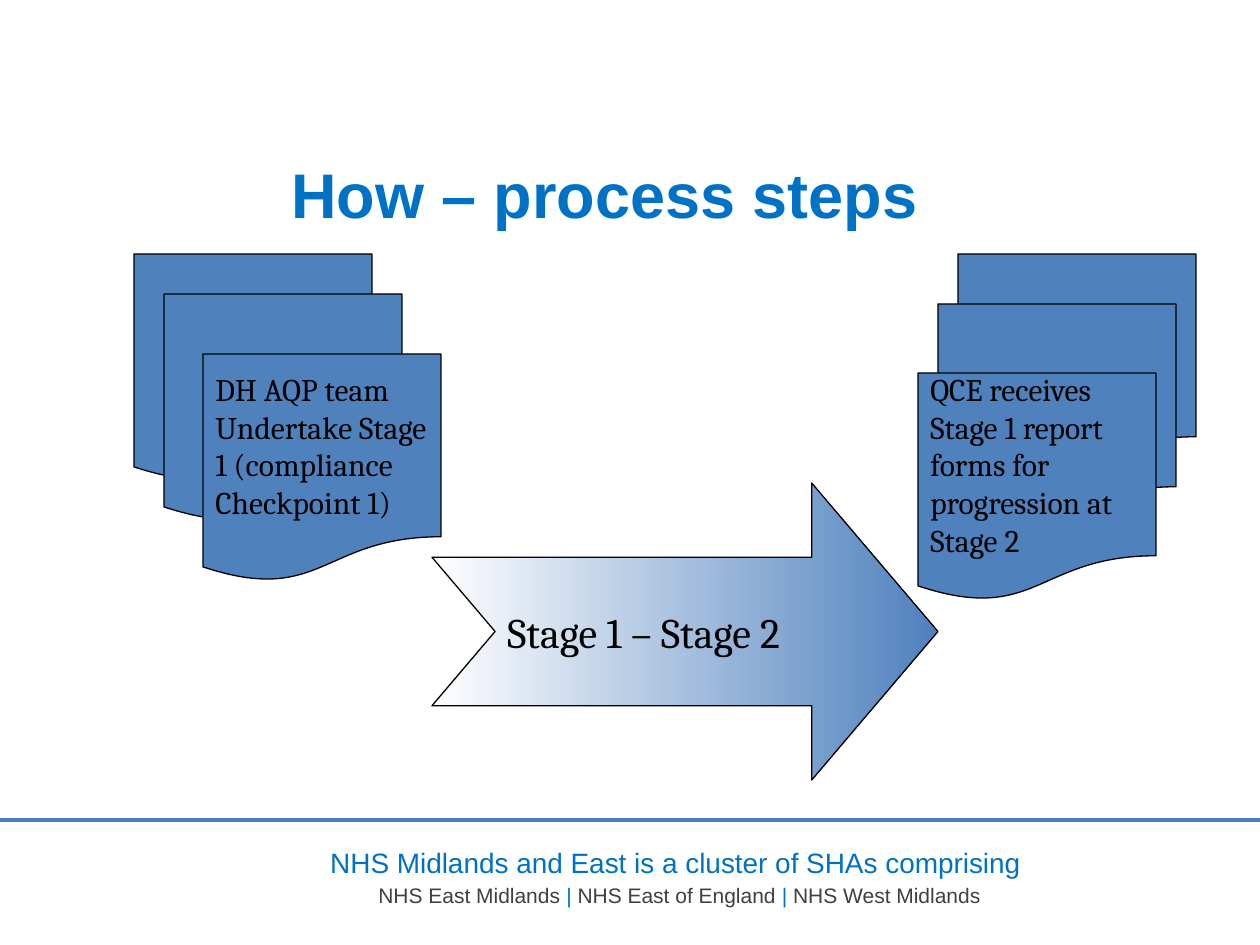
from lxml import etree
from pptx import Presentation
from pptx import util as u
from pptx.dml.color import RGBColor
from pptx.enum import shapes, text
from pptx.oxml.ns import qn

BLUE = RGBColor(0x00, 0x72, 0xC6)
FILL = RGBColor(0x4F, 0x81, 0xBD)
RULE = RGBColor(0x4B, 0x7E, 0xBC)
GREY = RGBColor(0x40, 0x40, 0x40)
BLACK = RGBColor(0, 0, 0)
WHITE = RGBColor(0xFF, 0xFF, 0xFF)

PX_PER_INCH = 126
SLIDE_W, SLIDE_H = 1260, 945


def px(*lengths):
    return [round(n * 914400 / PX_PER_INCH) for n in lengths]


class SlideBuilder:
    heading = {"name": "Arial", "bold": True}
    plain = {"name": "Arial"}
    label = {"name": "Cambria"}

    def __init__(self, deck):
        self.slide = deck.slides.add_slide(deck.slide_layouts[5])

    def style(self, font, size, color, values):
        for name, value in values.items():
            setattr(font, name, value)
        font.size = u.Pt(size)
        font.color.rgb = color

    def title(self, wording, at, size):
        box = self.slide.shapes.title
        box.left, box.top, box.width, box.height = px(*at)
        frame = box.text_frame
        frame.text = wording
        frame.vertical_anchor = text.MSO_ANCHOR.MIDDLE
        para = frame.paragraphs[0]
        para.alignment = text.PP_ALIGN.CENTER
        self.style(para.runs[0].font, size, BLUE, self.heading)

    def rule(self, y, weight):
        line = self.slide.shapes.add_connector(
            shapes.MSO_CONNECTOR.STRAIGHT, *px(0, y, SLIDE_W, y))
        line.line.color.rgb = RULE
        line.line.width = u.Pt(weight)
        etree.SubElement(line._element.spPr, qn("a:effectLst"))

    def centred_text(self, at, paragraphs):
        """Each paragraph is (size, space before, [(wording, colour), ...])."""
        frame = self.slide.shapes.add_textbox(*px(*at)).text_frame
        frame.word_wrap = True
        for index, (size, gap, spans) in enumerate(paragraphs):
            para = frame.add_paragraph() if index else frame.paragraphs[0]
            para.alignment = text.PP_ALIGN.CENTER
            para.space_before = u.Pt(gap)
            for wording, color in spans:
                span = para.add_run()
                span.text = wording
                self.style(span.font, size, color, self.plain)

    def shape(self, kind, at, lines=(), size=18):
        shape = self.slide.shapes.add_shape(kind, *px(*at))
        shape.shadow.inherit = False
        shape.fill.solid()
        shape.fill.fore_color.rgb = FILL
        shape.line.color.rgb = BLACK
        shape.line.width = u.Pt(0.75)
        frame = shape.text_frame
        frame.word_wrap = False
        frame.vertical_anchor = text.MSO_ANCHOR.MIDDLE
        for index, wording in enumerate(lines):
            para = frame.add_paragraph() if index else frame.paragraphs[0]
            para.alignment = text.PP_ALIGN.LEFT
            span = para.add_run()
            span.text = wording
            self.style(span.font, size, BLACK, self.label)
        return shape

    def arrow(self, at, wording, size):
        arrow = self.shape(shapes.MSO_SHAPE.NOTCHED_RIGHT_ARROW, at, [wording], size)
        arrow.adjustments[0], arrow.adjustments[1] = 0.5, 0.425
        arrow.fill.gradient()
        arrow.fill.gradient_angle = 0
        for stop, position, color in zip(arrow.fill.gradient_stops, (0, 1), (WHITE, FILL)):
            stop.position = position
            stop.color.rgb = color

    def document_stack(self, corners, lines):
        """Documents from back to front; the front one carries the text."""
        for index, (left, top) in enumerate(corners):
            front = index == len(corners) - 1
            self.shape(shapes.MSO_SHAPE.FLOWCHART_DOCUMENT,
                       (left, top, 238, 228), lines if front else ())


def main():
    deck = Presentation()
    deck.slide_width, deck.slide_height = px(SLIDE_W, SLIDE_H)
    page = SlideBuilder(deck)

    # Footer rule and title
    page.rule(820, 1.75)
    page.title("How – process steps", (64, 135, 1081, 117), 36)

    # Footer wording
    page.centred_text((203, 839, 953, 89), [
        (16, 0, [("NHS Midlands and East is a cluster of SHAs comprising ", BLUE)]),
        (12, 2.4, [("NHS East Midlands ", GREY), ("|", BLUE),
                   (" NHS East of England", GREY), (" |", BLUE),
                   (" NHS West Midlands", GREY)]),
    ])

    # Stage arrow
    page.arrow((432, 483, 506, 297), "Stage 1 – Stage 2", 24)

    # Receiving and sending document stacks
    page.document_stack(
        [(958, 254), (938, 304), (918, 373)],
        ["QCE receives", "Stage 1 report", "forms for", "progression at", "Stage 2"])
    page.document_stack(
        [(134, 254), (164, 294), (203, 354)],
        ["DH AQP team", "Undertake Stage", "1 (compliance", "Checkpoint 1)"])

    deck.save("out.pptx")


if __name__ == "__main__":
    main()
